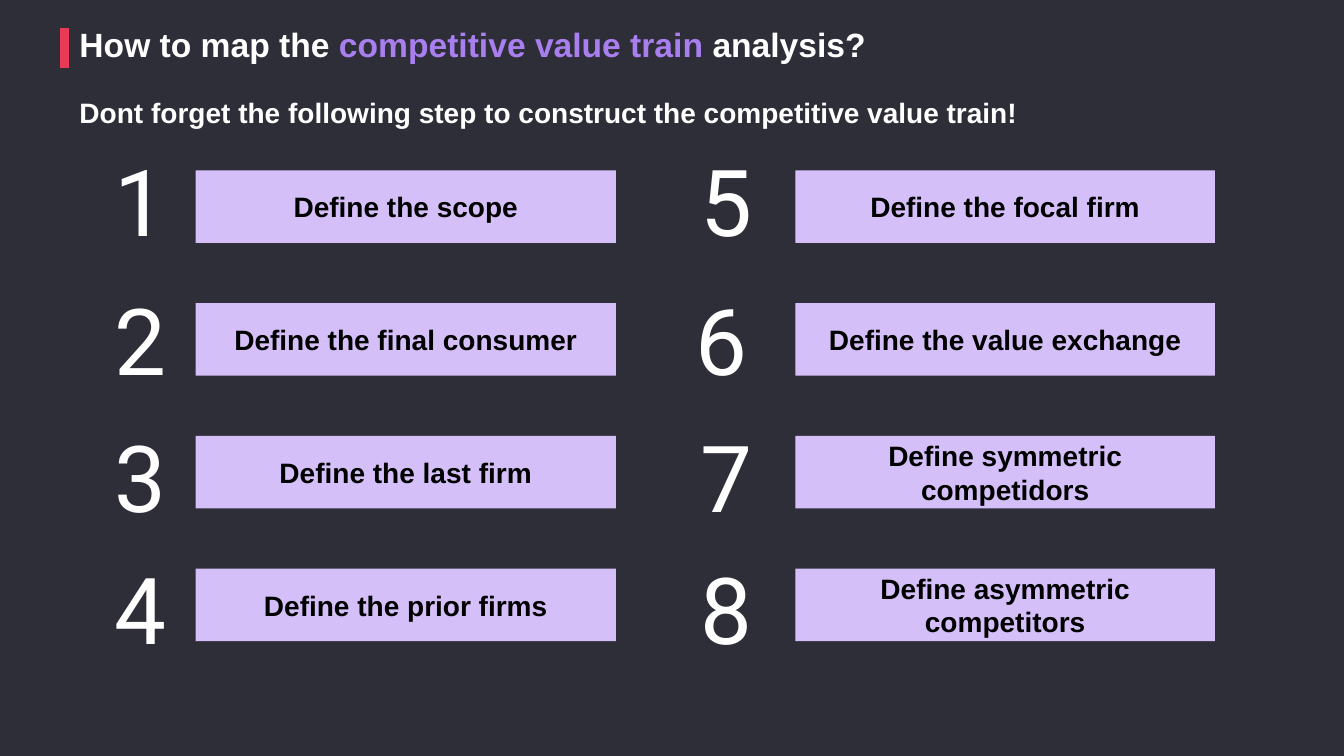
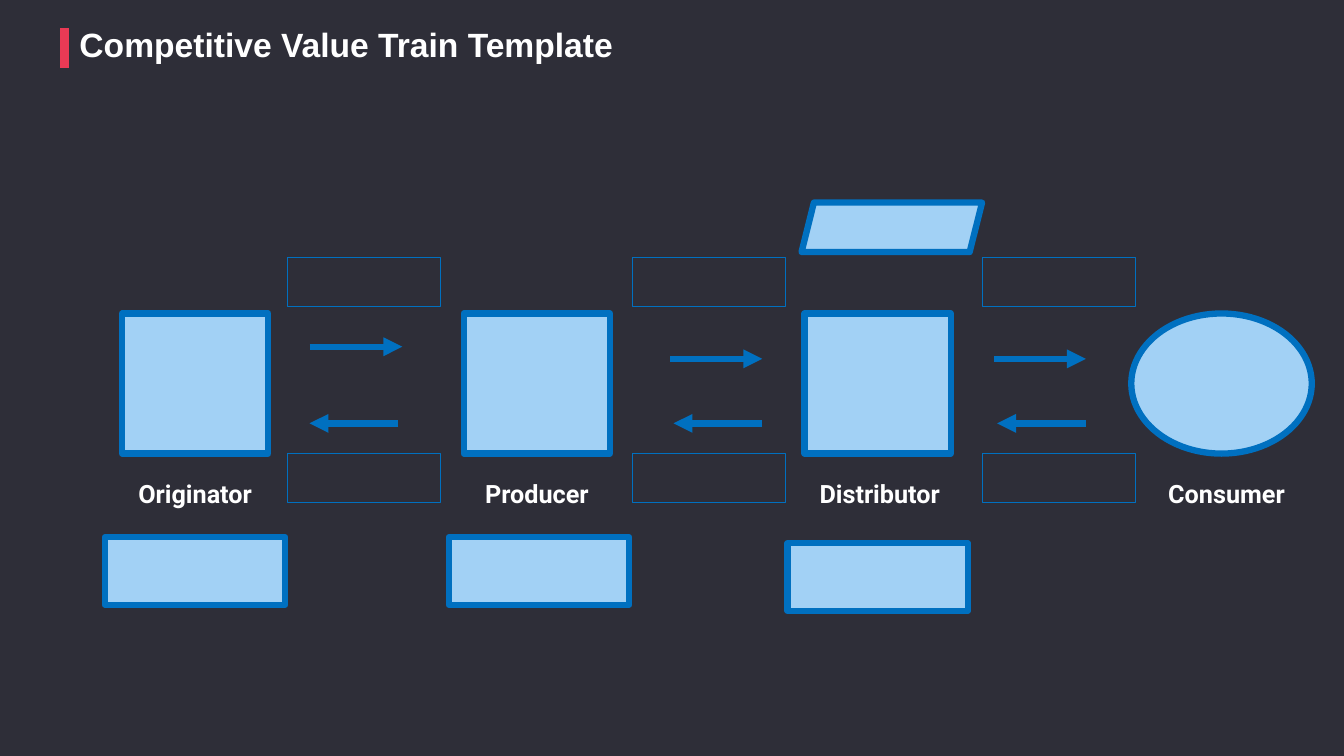
from pptx import Presentation
from pptx.dml.color import RGBColor
from pptx.enum.shapes import MSO_CONNECTOR, MSO_SHAPE
from pptx.enum.text import MSO_ANCHOR, PP_ALIGN
from pptx.oxml.ns import qn
from pptx.util import Inches, Pt
from lxml.etree import SubElement

BACK, ACCENT, WHITE, BLACK = "2E2E38", "EA3A55", "FFFFFF", "000000"
PURPLE, LILAC, BLUE, SKY = "A97FF0", "D4BFF8", "0070C0", "A2D1F5"

STEPS_TITLE = [("How to map the ", WHITE), ("competitive value train ", PURPLE),
               ("analysis?", WHITE)]
STEPS_SUBTITLE = "Dont forget the following step to construct the competitive value train!"
STEPS = ["Define the scope", "Define the final consumer", "Define the last firm",
         "Define the prior firms", "Define the focal firm", "Define the value exchange",
         "Define symmetric competidors", "Define asymmetric competitors"]
STEP_COLUMNS = [(1.94, 4.17, [1.14, 1.14, 1.14, 1.14]),
                (7.89, 4.16, [6.95, 6.9, 6.95, 6.95])]
NUMBER_TOPS = [1.56, 2.94, 4.3, 5.61]
STEP_TOP, STEP_PITCH, STEP_HEIGHT = 1.69, 1.317, 0.72

TRAIN_TITLE = [("Competitive Value Train Template", WHITE)]
STAGES = [("Originator", MSO_SHAPE.RECTANGLE, 1.21, 1.45, 0.88),
          ("Producer", MSO_SHAPE.RECTANGLE, 4.6, 1.45, 4.27),
          ("Distributor", MSO_SHAPE.RECTANGLE, 7.98, 1.45, 7.67),
          ("Consumer", MSO_SHAPE.OVAL, 11.22, 1.79, 11.11)]
COMPETITORS = [(MSO_SHAPE.RECTANGLE, 1.04, 5.33, 0.67),
               (MSO_SHAPE.RECTANGLE, 4.45, 5.33, 0.67),
               (MSO_SHAPE.RECTANGLE, 7.81, 5.39, 0.67),
               (MSO_SHAPE.PARALLELOGRAM, 7.95, 2.01, 0.49)]
EXCHANGES = [(2.85, 3.44, 3.07, 3.99, 3.95, 3.07),
             (6.27, 3.56, 6.65, 7.56, 7.56, 6.68),
             (9.74, 3.56, 9.86, 10.77, 10.77, 9.89)]


def color(value):
    return RGBColor.from_string(value)


def add_runs(p, runs, size, font, bold):
    for text, fill in runs:
        r = p.add_run()
        r.text = text
        r.font.size, r.font.name, r.font.bold = Pt(size), font, bold
        r.font.color.rgb = color(fill)


def add_text(s, left, top, width, height, runs, size, font="Arial", bold=True):
    tf = s.shapes.add_textbox(Inches(left), Inches(top), Inches(width), Inches(height)).text_frame
    tf.word_wrap = True
    add_runs(tf.paragraphs[0], runs, size, font, bold)
    return tf


def add_heading(s, *args, **style):
    tf = add_text(s, *args, **style)
    tf.paragraphs[0].line_spacing = 0.85
    tf.paragraphs[0].space_after = Pt(6)
    return tf


def add_box(s, kind, left, top, width, height, fill=None, line=None, weight=4.5):
    sp = s.shapes.add_shape(kind, Inches(left), Inches(top), Inches(width), Inches(height))
    sp.shadow.inherit = False
    if fill:
        sp.fill.solid()
        sp.fill.fore_color.rgb = color(fill)
    else:
        sp.fill.background()
    if line:
        sp.line.color.rgb = color(line)
        sp.line.width = Pt(weight)
    else:
        sp.line.fill.background()
    return sp


def add_line(s, x1, y1, x2, y2, stroke, weight, arrow=False):
    line = s.shapes.add_connector(MSO_CONNECTOR.STRAIGHT, Inches(x1), Inches(y1),
                                  Inches(x2), Inches(y2))
    line.line.color.rgb = color(stroke)
    line.line.width = Pt(weight)
    props = line._element.spPr
    if arrow:
        SubElement(props.find(qn("a:ln")), qn("a:tailEnd"), type="triangle")
    SubElement(props, qn("a:effectLst"))


def add_slide(prs, title):
    s = prs.slides.add_slide(prs.slide_layouts[6])
    add_line(s, 0.64, 0.28, 0.64, 0.67, ACCENT, 6)
    add_heading(s, 0.69, 0.25, 10.84, 0.44, title, 24)
    return s


def add_steps(prs):
    s = add_slide(prs, STEPS_TITLE)
    add_heading(s, 0.69, 0.95, 10.84, 0.39, [(STEPS_SUBTITLE, WHITE)], 20)
    for i, step in enumerate(STEPS):
        column, row = divmod(i, len(NUMBER_TOPS))
        left, width, number_lefts = STEP_COLUMNS[column]
        tf = add_heading(s, number_lefts[row], NUMBER_TOPS[row], 1.15, 0.98,
                         [(str(i + 1), WHITE)], 66, font="Roboto", bold=False)
        tf.margin_left = tf.margin_right = tf.margin_bottom = 0
        tf.margin_top = Inches(0.04)
        sp = add_box(s, MSO_SHAPE.RECTANGLE, left, STEP_TOP + row * STEP_PITCH,
                     width, STEP_HEIGHT, LILAC)
        tf = sp.text_frame
        tf.word_wrap = True
        tf.vertical_anchor = MSO_ANCHOR.MIDDLE
        tf.paragraphs[0].alignment = PP_ALIGN.CENTER
        add_runs(tf.paragraphs[0], [(step, BLACK)], 20, "Arial", True)


def add_train(prs):
    s = add_slide(prs, TRAIN_TITLE)
    for name, kind, left, width, label_left in STAGES:
        add_box(s, kind, left, 3.11, width, 1.39, SKY, BLUE)
        tf = add_text(s, label_left, 4.7, 2.11, 0.37, [(name, WHITE)], 18, "Roboto")
        tf.paragraphs[0].alignment = PP_ALIGN.CENTER
    for kind, left, top, height in COMPETITORS:
        add_box(s, kind, left, top, 1.79, height, SKY, BLUE)
    for left, give_y, give_from, give_to, back_from, back_to in EXCHANGES:
        add_line(s, give_from, give_y, give_to, give_y, BLUE, 4.5, arrow=True)
        add_line(s, back_from, 4.2, back_to, 4.2, BLUE, 4.5, arrow=True)
        for top in (2.55, 4.5):
            add_box(s, MSO_SHAPE.RECTANGLE, left, top, 1.52, 0.49, line=BLUE, weight=0.75)


def main():
    prs = Presentation()
    prs.slide_width, prs.slide_height = Inches(13.33), Inches(7.5)
    back = prs.slide_master.background.fill
    back.solid()
    back.fore_color.rgb = color(BACK)
    add_steps(prs)
    add_train(prs)
    prs.save("out.pptx")


if __name__ == "__main__":
    main()
